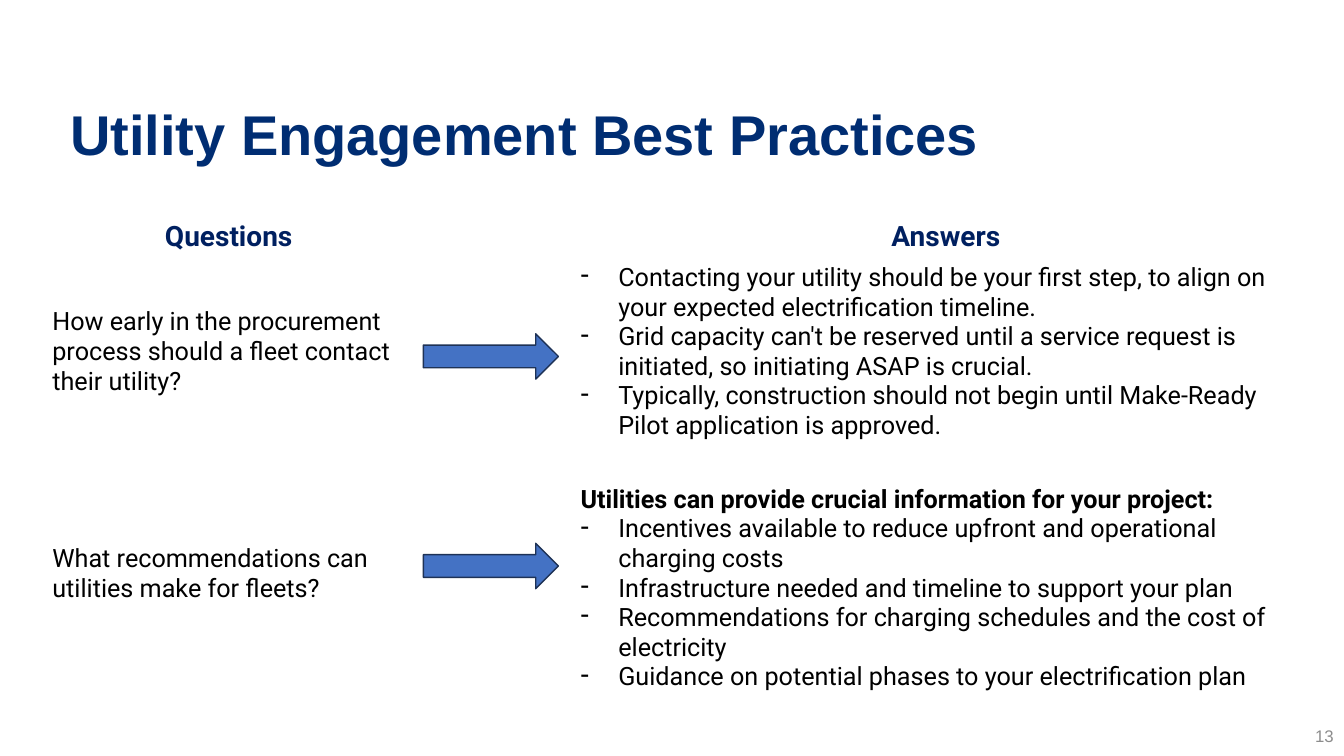
from dataclasses import dataclass

from lxml import etree
from pptx import Presentation
from pptx import util as u
from pptx.dml.color import RGBColor
from pptx.enum import shapes, text
from pptx.oxml import ns

Pt = u.Pt


@dataclass(frozen=True)
class Theme:
    title_font: str = "Arial"
    body_font: str = "Roboto"
    title: str = "002D72"
    heading: str = "002060"
    body: str = "000000"
    number: str = "8C8C8C"
    arrow: str = "4472C4"
    arrow_line: str = "1E3256"
    title_size: int = 40
    heading_size: int = 20
    body_size: int = 18
    number_size: int = 12


THEME = Theme()
LEFT, CENTER, RIGHT = text.PP_ALIGN.LEFT, text.PP_ALIGN.CENTER, text.PP_ALIGN.RIGHT
HANGING = 27

# Each row: question, optional lead-in, answers
ROWS = [
    ("How early in the procurement process should a fleet contact their utility?", None, [
        "Contacting your utility should be your first step, to align on "
        "your expected electrification timeline.",
        "Grid capacity can't be reserved until a service request is "
        "initiated, so initiating ASAP is crucial.",
        "Typically, construction should not begin until Make-Ready "
        "Pilot application is approved.",
    ]),
    ("What recommendations can utilities make for fleets?",
     "Utilities can provide crucial information for your project:", [
         "Incentives available to reduce upfront and operational charging costs",
         "Infrastructure needed and timeline to support your plan",
         "Recommendations for charging schedules and the cost of electricity",
         "Guidance on potential phases to your electrification plan",
     ]),
]


def add_run(p, words, font, size, color, bold=False):
    r = p.add_run()
    r.text = words
    r.font.name = font
    r.font.size = Pt(size)
    r.font.bold = bold
    r.font.color.rgb = RGBColor.from_string(color)


def add_dash(p):
    pPr = p._p.get_or_add_pPr()
    pPr.set("marL", str(Pt(HANGING)))
    pPr.set("indent", str(-Pt(HANGING)))
    color = etree.SubElement(pPr, ns.qn("a:buClr"))
    etree.SubElement(color, ns.qn("a:srgbClr")).set("val", THEME.body)
    etree.SubElement(pPr, ns.qn("a:buChar")).set("char", "-")


def add_label(s, box, words, size, color, align, bold=False):
    """One line of text, centred vertically in its box."""
    tf = s.shapes.add_textbox(*map(Pt, box)).text_frame
    tf.word_wrap = True
    tf.vertical_anchor = text.MSO_ANCHOR.MIDDLE
    p = tf.paragraphs[0]
    p.alignment = align
    add_run(p, words, THEME.title_font, size, color, bold)


def fill_answers(cell, lead, answers):
    tf = cell.text_frame
    lines = ([(lead, True)] if lead else []) + [(a, False) for a in answers]
    for i, (words, is_lead) in enumerate(lines):
        p = tf.add_paragraph() if i else tf.paragraphs[0]
        if not is_lead:
            add_dash(p)
        add_run(p, words, THEME.body_font, THEME.body_size, THEME.body, is_lead)
    if lead:
        cell.margin_top = Pt(24.7)  # one line of air above the lead-in


def add_question_table(s, box):
    left, top, width, height = box
    question_w, gap_w, header_h, first_h = 266.4, 110.9, 31, 134
    table = s.shapes.add_table(3, 3, *map(Pt, box)).table
    table.first_row = table.horz_banding = False
    for col, w in zip(table.columns, (question_w, gap_w, width - question_w - gap_w)):
        col.width = Pt(w)
    for row, h in zip(table.rows, (header_h, first_h, height - header_h - first_h)):
        row.height = Pt(h)
    for cell in table.iter_cells():
        cell.fill.background()
        cell.vertical_anchor = text.MSO_ANCHOR.MIDDLE

    # Headings
    for col, words in ((0, "Questions"), (2, "Answers")):
        p = table.cell(0, col).text_frame.paragraphs[0]
        p.alignment = CENTER
        add_run(p, words, THEME.body_font, THEME.heading_size, THEME.heading, True)

    # Questions and answers
    for i, (question, lead, answers) in enumerate(ROWS, 1):
        p = table.cell(i, 0).text_frame.paragraphs[0]
        add_run(p, question, THEME.body_font, THEME.body_size, THEME.body)
        fill_answers(table.cell(i, 2), lead, answers)

    # Arrows in the gap column
    for offset in (85, 234.7):
        arrow = s.shapes.add_shape(
            shapes.MSO_SHAPE.RIGHT_ARROW, Pt(left + question_w + 5.8), Pt(top + offset),
            Pt(96.5), Pt(32.4))
        arrow.shadow.inherit = False
        arrow.fill.solid()
        arrow.fill.fore_color.rgb = RGBColor.from_string(THEME.arrow)
        arrow.line.color.rgb = RGBColor.from_string(THEME.arrow_line)
        arrow.line.width = Pt(1)


def main():
    prs = Presentation()
    prs.slide_width, prs.slide_height = Pt(960), Pt(540)
    s = prs.slides.add_slide(prs.slide_layouts[6])
    add_question_table(s, (30.2, 153.4, 913.7, 347.8))
    add_label(s, (917.3, 511.2, 42.5, 28.8), "13", THEME.number_size, THEME.number, RIGHT)
    add_label(s, (43.2, 43.2, 828, 104.4), "Utility Engagement Best Practices",
              THEME.title_size, THEME.title, LEFT, True)
    prs.save("out.pptx")


if __name__ == "__main__":
    main()
